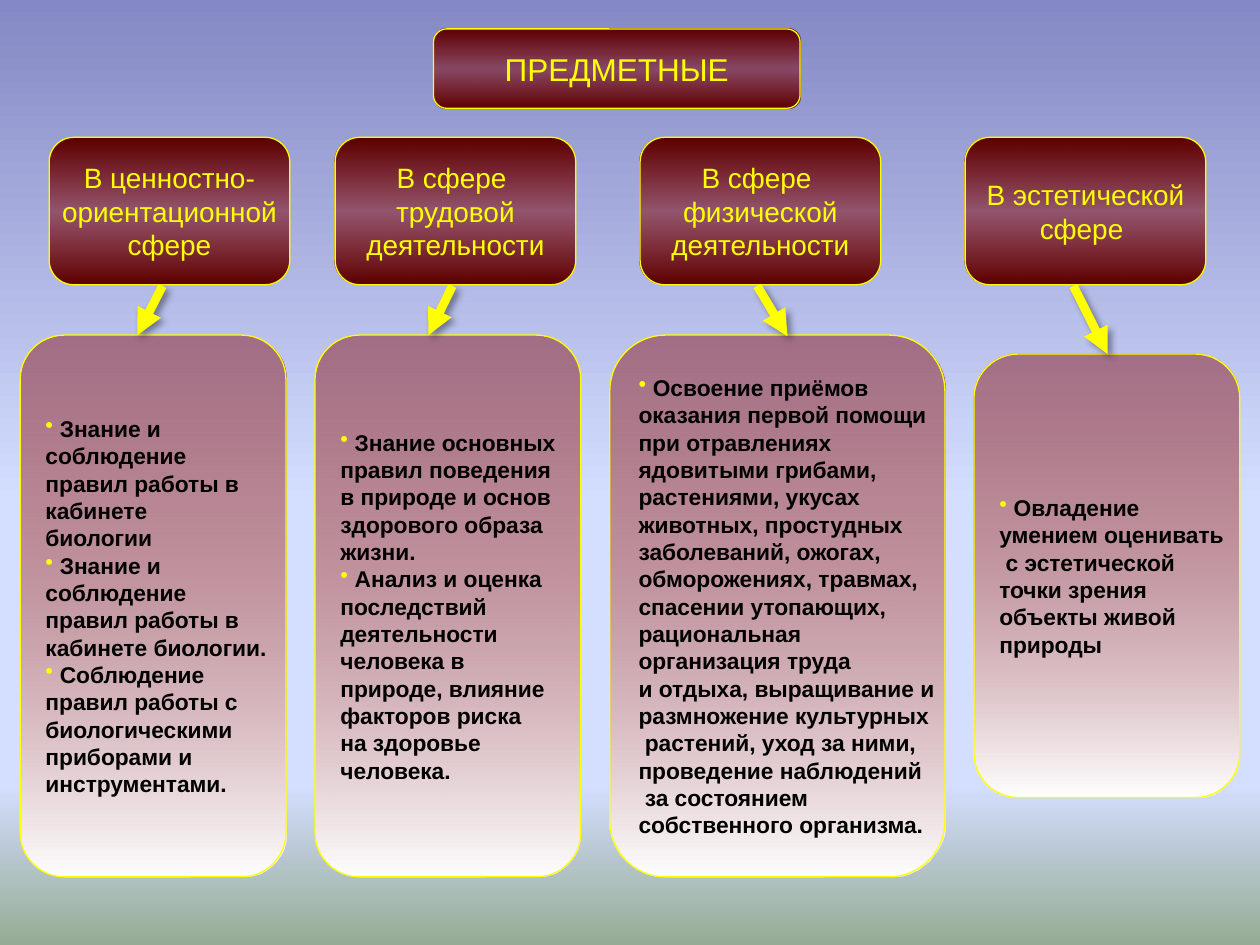
from dataclasses import dataclass

from lxml import etree
from pptx import Presentation
from pptx.dml.color import RGBColor
from pptx.enum.shapes import MSO_CONNECTOR, MSO_SHAPE
from pptx.enum.text import MSO_ANCHOR, PP_ALIGN
from pptx.oxml.ns import qn
from pptx.util import Inches, Pt

ROUNDED = MSO_SHAPE.ROUNDED_RECTANGLE
STRAIGHT = MSO_CONNECTOR.STRAIGHT
MIDDLE = MSO_ANCHOR.MIDDLE
LEFT, CENTER = PP_ALIGN.LEFT, PP_ALIGN.CENTER

COLORS = {
    "yellow": "FFFF00",
    "black": "000000",
    "white": "FFFFFF",
    "maroon": "800000",
    "dark_maroon": "5C0000",
    "sky": "8488C4",
    "haze": "D4DEFF",
    "grass": "96AB94",
}
# Gradient stops: position %, colour, opacity %
SKY_STOPS = [(0, "sky", 100), (53, "haze", 100), (83, "haze", 100), (100, "grass", 100)]
HEADING_STOPS = [(0, "dark_maroon", 100), (50, "maroon", 50), (100, "dark_maroon", 100)]
BODY_STOPS = [(0, "maroon", 43), (100, "white", 100)]

FONT = "Arial"
BULLET = "•"
HEADING_TOP, HEADING_WIDTH, HEADING_HEIGHT = 1.09, 1.91, 1.17
ARROW_TOP = 2.27


@dataclass
class Box:
    left: float
    top: float
    width: float
    height: float


@dataclass
class Sphere:
    """One column: a heading, an arrow and a body; lines opening with • are bulleted."""
    heading_left: float
    heading: str
    body_box: Box
    body: str
    arrow_from_x: float
    arrow_to: tuple[float, float]


SPHERES = [
    Sphere(0.39, "В ценностно-\nориентационной\nсфере", Box(0.16, 2.66, 2.11, 4.3),
           "• Знание и\nсоблюдение\nправил работы в\nкабинете\nбиологии\n"
           "• Знание и\nсоблюдение\nправил работы в\nкабинете биологии.\n"
           "• Соблюдение\nправил работы с\nбиологическими\nприборами и\nинструментами.",
           1.29, (1.09, 2.66)),
    Sphere(2.66, "В сфере \nтрудовой\nдеятельности", Box(2.5, 2.66, 2.11, 4.3),
           "• Знание основных\nправил поведения\nв природе и основ\n"
           "здорового образа\nжизни.\n"
           "• Анализ и оценка\nпоследствий\nдеятельности\nчеловека в\n"
           "природе, влияние\nфакторов риска\nна здоровье\nчеловека.",
           3.59, (3.4, 2.66)),
    Sphere(5.08, "В сфере \nфизической\nдеятельности", Box(4.84, 2.66, 2.66, 4.3),
           "• Освоение приёмов\nоказания первой помощи\nпри отравлениях\n"
           "ядовитыми грибами,\nрастениями, укусах\nживотных, простудных\n"
           "заболеваний, ожогах,\nобморожениях, травмах,\nспасении утопающих,\n"
           "рациональная\nорганизация труда\nи отдыха, выращивание и\n"
           "размножение культурных\n растений, уход за ними,\n"
           "проведение наблюдений\n за состоянием\nсобственного организма.",
           6.01, (6.25, 2.67)),
    Sphere(7.66, "В эстетической\nсфере ", Box(7.73, 2.81, 2.11, 3.52),
           "• Овладение\nумением оценивать\n с эстетической\nточки зрения\n"
           "объекты живой\nприроды",
           8.52, (8.79, 2.81)),
]


def rgb(color: str) -> RGBColor:
    return RGBColor.from_string(COLORS[color])


def add_xml(parent, tag: str, **attributes):
    """Append a drawing element such as a:gs with its attributes."""
    child = etree.SubElement(parent, qn(tag))
    for key, value in attributes.items():
        child.set(key, str(value))
    return child


def add_color(parent, color: str, opacity: int = 100) -> None:
    clr = add_xml(parent, "a:srgbClr", val=COLORS[color])
    if opacity < 100:
        add_xml(clr, "a:alpha", val=opacity * 1000)


def fill_downwards(fill, owner, stops: list) -> None:
    """Give the first fill inside owner a top-to-bottom gradient."""
    fill.gradient()
    fill.gradient_angle = 270
    stop_list = owner.find(".//" + qn("a:gsLst"))
    for old_stop in list(stop_list):
        stop_list.remove(old_stop)
    for position, color, opacity in stops:
        add_color(add_xml(stop_list, "a:gs", pos=position * 1000), color, opacity)


def add_bullet(paragraph) -> None:
    properties = paragraph._p.get_or_add_pPr()
    add_color(add_xml(properties, "a:buClr"), "yellow")
    add_xml(properties, "a:buChar", char=BULLET)


def write_text(frame, text: str, *, size: float, color: str,
               bold: bool = False, align=CENTER) -> None:
    frame.word_wrap = False
    frame.vertical_anchor = MIDDLE
    for index, line in enumerate(text.split("\n")):
        paragraph = frame.add_paragraph() if index else frame.paragraphs[0]
        paragraph.alignment = align
        if line.startswith(BULLET):
            add_bullet(paragraph)
        run = paragraph.add_run()
        run.text = line.removeprefix(BULLET)
        run.font.name = FONT
        run.font.size = Pt(size)
        run.font.bold = bold
        run.font.color.rgb = rgb(color)


def add_panel(slide, box: Box, stops: list, text: str, **text_format) -> None:
    panel = slide.shapes.add_shape(ROUNDED, Inches(box.left), Inches(box.top),
                                   Inches(box.width), Inches(box.height))
    panel.shadow.inherit = False
    fill_downwards(panel.fill, panel.element, stops)
    panel.line.color.rgb = rgb("yellow")
    panel.line.width = Pt(0.75)
    write_text(panel.text_frame, text, **text_format)


def add_arrow(slide, start: tuple[float, float], end: tuple[float, float]) -> None:
    arrow = slide.shapes.add_connector(STRAIGHT, *map(Inches, start + end))
    arrow.line.color.rgb = rgb("yellow")
    arrow.line.width = Pt(5)
    add_xml(arrow.line._get_or_add_ln(), "a:tailEnd", type="triangle")
    effects = add_xml(arrow.element.spPr, "a:effectLst")
    shadow = add_xml(effects, "a:outerShdw", blurRad=Pt(4), dist=Pt(3),
                     dir=45 * 60000, rotWithShape=0)
    add_color(shadow, "black", 40)


def main() -> None:
    deck = Presentation()
    deck.slide_width, deck.slide_height = Inches(10), Inches(7.5)
    slide = deck.slides.add_slide(deck.slide_layouts[6])
    fill_downwards(slide.background.fill, slide.element, SKY_STOPS)

    add_panel(slide, Box(3.44, 0.23, 2.91, 0.63), HEADING_STOPS, "ПРЕДМЕТНЫЕ",
              size=18, color="yellow")
    for sphere in SPHERES:
        heading_box = Box(sphere.heading_left, HEADING_TOP, HEADING_WIDTH, HEADING_HEIGHT)
        add_panel(slide, heading_box, HEADING_STOPS, sphere.heading,
                  size=16, color="yellow")
        add_panel(slide, sphere.body_box, BODY_STOPS, sphere.body,
                  size=13, color="black", bold=True, align=LEFT)
        add_arrow(slide, (sphere.arrow_from_x, ARROW_TOP), sphere.arrow_to)

    deck.save("out.pptx")


if __name__ == "__main__":
    main()
